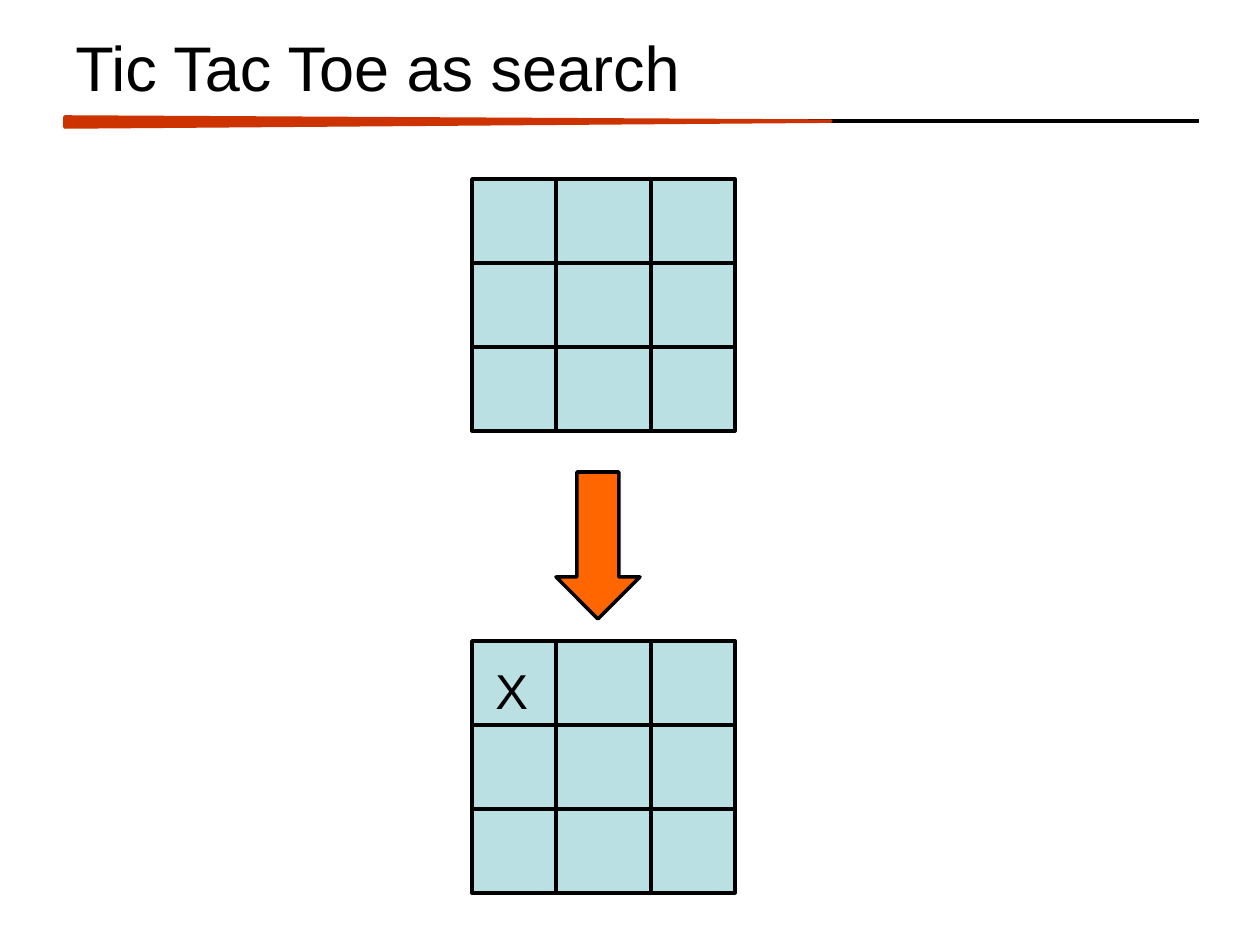
import pptx
import pptx.dml.color
import pptx.enum.shapes
import pptx.enum.text
import pptx.util
from lxml import etree
from pptx.oxml.ns import qn

PX_PER_INCH = 126
BLACK = pptx.dml.color.RGBColor(0x00, 0x00, 0x00)
RED = pptx.dml.color.RGBColor(0xCC, 0x33, 0x00)
ORANGE = pptx.dml.color.RGBColor(0xFF, 0x66, 0x00)
PALE_BLUE = pptx.dml.color.RGBColor(0xBB, 0xE0, 0xE3)
SHAPE = pptx.enum.shapes.MSO_SHAPE
ANCHOR = pptx.enum.text.MSO_ANCHOR
LINE_WIDTH = pptx.util.Pt(2)


def px(*lengths):
    return [round(length * 914400 / PX_PER_INCH) for length in lengths]


def add_filled(shapes, kind, box, fill, line=BLACK):
    shape = shapes.add_shape(kind, *px(*box))
    shape.shadow.inherit = False
    shape.fill.solid()
    shape.fill.fore_color.rgb = fill
    shape.line.color.rgb = line
    shape.line.width = LINE_WIDTH
    return shape


def add_line(shapes, start, end):
    connector = shapes.add_connector(
        pptx.enum.shapes.MSO_CONNECTOR.STRAIGHT, *px(*start, *end))
    connector.line.color.rgb = BLACK
    connector.line.width = LINE_WIDTH
    etree.SubElement(connector._element.spPr, qn("a:effectLst"))


def add_text(shapes, box, text, size, wrap=True, anchor=ANCHOR.TOP):
    frame = shapes.add_textbox(*px(*box)).text_frame
    frame.word_wrap = wrap
    frame.vertical_anchor = anchor
    run = frame.paragraphs[0].add_run()
    run.text = text
    run.font.name = "Arial"
    run.font.size = pptx.util.Pt(size)
    run.font.color.rgb = BLACK


def add_header(shapes, box, title):
    """Title above a rule whose left part is a red wedge tapering rightward."""
    left, top, width, height = box
    rule_y = top + 100
    add_line(shapes, (left + 2, rule_y), (left + width + 2, rule_y))

    length, thickness = 766, 10
    center_x = left + 2 + length / 2
    wedge = add_filled(
        shapes, SHAPE.ISOSCELES_TRIANGLE,
        (center_x - thickness / 2, rule_y + 1 - length / 2, thickness, length),
        RED, RED)
    wedge.rotation = 90
    wedge.adjustments[0] = 0.42

    add_text(shapes, box, title, 36, anchor=ANCHOR.MIDDLE)


def add_board(slide, box, mark=None):
    """Three by three board, with an optional mark in its first cell."""
    left, top, width, height = box
    cell = height // 3
    group = slide.shapes.add_group_shape().shapes
    add_filled(group, SHAPE.RECTANGLE, box, PALE_BLUE)
    for x in (left + cell, left + width - cell):
        add_line(group, (x, top), (x, top + height))
    for y in (top + cell, top + 2 * cell):
        add_line(group, (left, y), (left + width, y))
    if mark:
        add_text(slide.shapes, (left + 11, top + 13, 59, 72), mark, 28, wrap=False)


def main():
    presentation = pptx.Presentation()
    presentation.slide_width, presentation.slide_height = px(1260, 945)
    slide = presentation.slides.add_slide(presentation.slide_layouts[6])

    add_header(slide.shapes, (63, 21, 1134, 91), "Tic Tac Toe as search")
    add_board(slide, (472, 179, 263, 252))
    add_filled(slide.shapes, SHAPE.DOWN_ARROW, (556, 472, 84, 147), ORANGE)
    add_board(slide, (472, 641, 263, 252), mark="X")

    presentation.save("out.pptx")


if __name__ == "__main__":
    main()
